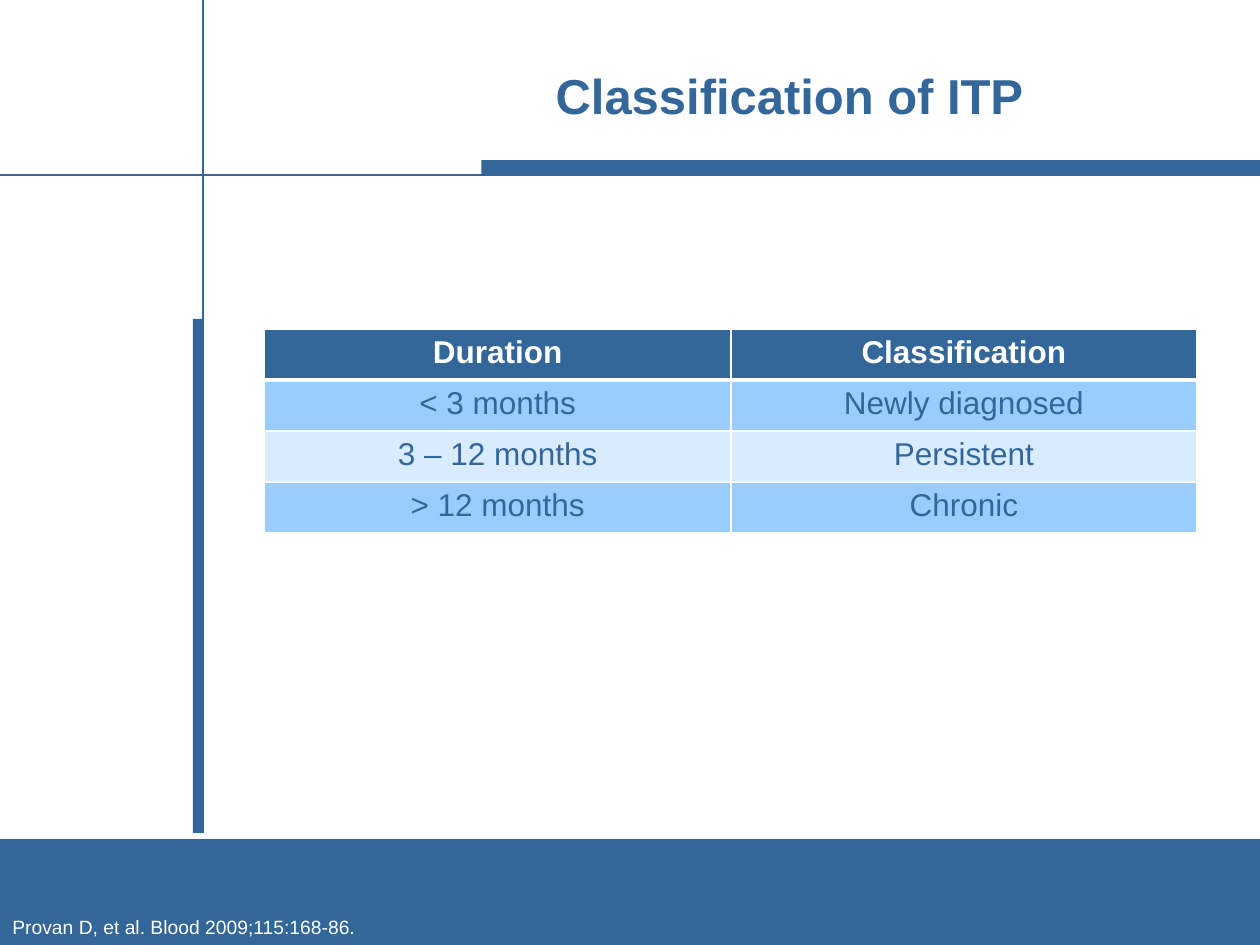
from dataclasses import dataclass

from lxml.etree import SubElement
from pptx import Presentation
from pptx.dml.color import RGBColor as Color
from pptx.enum.shapes import MSO_CONNECTOR as Connector, MSO_SHAPE as Shape
from pptx.enum.text import MSO_ANCHOR as Anchor, PP_ALIGN as Align
from pptx.oxml.ns import qn
from pptx.util import Inches, Pt


@dataclass(frozen=True)
class Theme:
    font: str = "Arial"
    blue: str = "336699"
    sky: str = "99CCFF"
    pale: str = "D9ECFF"
    white: str = "FFFFFF"
    title_size: int = 28
    table_size: int = 18
    source_size: int = 11
    rule_width: float = 1
    header_rule_width: float = 3


THEME = Theme()
WIDTH, HEIGHT = 10, 7.5
ROWS = [
    ("Duration", "Classification"),
    ("< 3 months", "Newly diagnosed"),
    ("3 – 12 months", "Persistent"),
    ("> 12 months", "Chronic"),
]


def inches(box):
    return [Inches(length) for length in box]


def style(para, size, color, bold=False, align=Align.LEFT):
    para.alignment = align
    para.font.name = THEME.font
    para.font.size = Pt(size)
    para.font.bold = bold
    para.font.color.rgb = Color.from_string(color)


def add_bar(page, box):
    bar = page.shapes.add_shape(Shape.RECTANGLE, *inches(box))
    bar.shadow.inherit = False
    bar.fill.solid()
    bar.fill.fore_color.rgb = Color.from_string(THEME.blue)
    bar.line.fill.background()


def add_rule(page, start, end):
    rule = page.shapes.add_connector(Connector.STRAIGHT, *inches(start + end))
    rule.line.color.rgb = Color.from_string(THEME.blue)
    rule.line.width = Pt(THEME.rule_width)
    SubElement(rule._element.spPr, qn("a:effectLst"))


def add_text(page, box, text, **look):
    frame = page.shapes.add_textbox(*inches(box)).text_frame
    frame.word_wrap = True
    frame.vertical_anchor = Anchor.MIDDLE
    para = frame.paragraphs[0]
    para.text = text
    style(para, **look)


def add_frame(page, box):
    """Crossing rules, each thickened along part of its length."""
    left, top, width, height = box
    rule_x, rule_y = left + 1.61, top + 1.39
    bar_x, bar_y = left + 3.82, top + 2.53
    # Upright rule and bar
    add_bar(page, (rule_x - 0.08, bar_y, 0.08, top + height - bar_y))
    add_rule(page, (rule_x, top), (rule_x, top + height))
    # Level rule and bar
    add_bar(page, (bar_x, rule_y - 0.12, left + width - bar_x, 0.12))
    add_rule(page, (left, rule_y), (left + width, rule_y))


def add_footer(page, box, source):
    """Blue band with the source on its bottom edge."""
    left, top, width, height = box
    line_height = 0.29
    add_bar(page, box)
    add_text(page, (left, top + height - line_height, width, line_height),
             source, size=THEME.source_size, color=THEME.white)


def set_borders(cell, bottom_width):
    properties = cell._tc.get_or_add_tcPr()
    widths = dict.fromkeys(("lnL", "lnR", "lnT"), THEME.rule_width)
    widths["lnB"] = bottom_width
    for position, (side, width) in enumerate(widths.items()):
        border = SubElement(properties, qn(f"a:{side}"), w=str(Pt(width)))
        fill = SubElement(border, qn("a:solidFill"))
        SubElement(fill, qn("a:srgbClr"), val=THEME.white)
        properties.insert(position, border)


def add_duration_table(page, box, rows):
    table = page.shapes.add_table(len(rows), len(rows[0]), *inches(box)).table
    for row_index, row in enumerate(rows):
        header = row_index == 0
        band = THEME.sky if row_index % 2 else THEME.pale
        for column_index, text in enumerate(row):
            cell = table.cell(row_index, column_index)
            cell.text = text
            cell.fill.solid()
            cell.fill.fore_color.rgb = Color.from_string(
                THEME.blue if header else band)
            # The rule below the header is shared with the row beneath it
            set_borders(cell, THEME.header_rule_width if header
                        else THEME.rule_width)
            if row_index == 1:
                top_border = cell._tc.tcPr.find(qn("a:lnT"))
                top_border.set("w", str(Pt(THEME.header_rule_width)))
            style(cell.text_frame.paragraphs[0], THEME.table_size,
                  THEME.white if header else THEME.blue, header, Align.CENTER)


def main():
    deck = Presentation()
    deck.slide_width, deck.slide_height = inches((WIDTH, HEIGHT))
    page = deck.slides.add_slide(deck.slide_layouts[6])

    footer_top = 6.66
    add_footer(page, (0, footer_top, WIDTH, HEIGHT - footer_top),
               "Provan D, et al. Blood 2009;115:168-86.")
    add_frame(page, (0, 0, WIDTH, 6.61))
    add_text(page, (2.72, 0.44, 7.09, 0.63), "Classification of ITP",
             size=THEME.title_size, color=THEME.blue, bold=True,
             align=Align.CENTER)
    add_duration_table(page, (2.1, 2.61, 7.4, 1.62), ROWS)

    deck.save("out.pptx")


if __name__ == "__main__":
    main()
